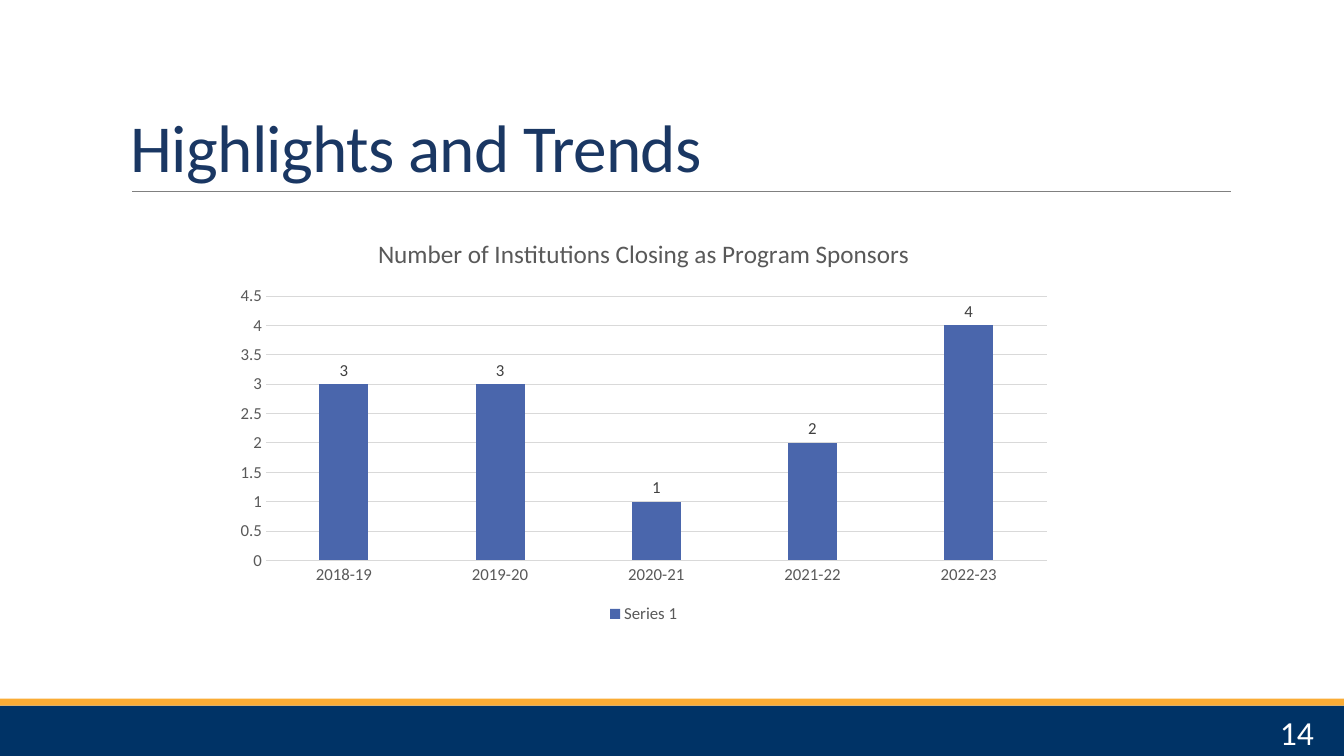
from lxml.etree import SubElement
from pptx import Presentation
from pptx.chart.data import CategoryChartData
from pptx.dml.color import RGBColor
from pptx.enum.chart import XL_CHART_TYPE, XL_LABEL_POSITION, XL_LEGEND_POSITION, XL_TICK_MARK
from pptx.enum.shapes import MSO_CONNECTOR, MSO_SHAPE
from pptx.enum.text import MSO_ANCHOR, PP_ALIGN
from pptx.oxml.ns import qn
from pptx.util import Inches, Pt

COLOURS = {
    "navy": "003366", "gold": "FAAC35", "rule": "808080", "heading": "1A3763",
    "white": "FFFFFF", "bar": "4A66AC", "grid": "D9D9D9", "axis": "595959",
    "label": "404040",
}


class SlideBuilder:
    """Holds the style and current slide; lengths are percents of the slide."""

    def __init__(self, presentation, font="Calibri"):
        self.width = presentation.slide_width
        self.height = presentation.slide_height
        self.font_name = font
        self.slide = presentation.slides.add_slide(presentation.slide_layouts[6])

    def place(self, x, y):
        return round(self.width * x / 100), round(self.height * y / 100)

    def area(self, x, y, w, h):
        return *self.place(x, y), *self.place(w, h)

    def colour(self, name):
        return RGBColor.from_string(COLOURS[name])

    def style_font(self, font, size, colour):
        font.name = self.font_name
        font.size = Pt(size)
        font.bold = False
        font.color.rgb = self.colour(colour)

    def style_line(self, line, colour, width):
        line.color.rgb = self.colour(colour)
        line.width = Pt(width)

    def band(self, area, colour):
        band = self.slide.shapes.add_shape(MSO_SHAPE.RECTANGLE, *self.area(*area))
        band.shadow.inherit = False
        band.fill.solid()
        band.fill.fore_color.rgb = self.colour(colour)
        band.line.fill.background()

    def rule(self, start, end, colour, width):
        rule = self.slide.shapes.add_connector(
            MSO_CONNECTOR.STRAIGHT, *self.place(*start), *self.place(*end))
        self.style_line(rule.line, colour, width)
        SubElement(rule._element.spPr, qn("a:effectLst"))

    def text(self, area, words, size, colour, anchor, align=PP_ALIGN.LEFT,
             line_spacing=1.0, tracking=0):
        frame = self.slide.shapes.add_textbox(*self.area(*area)).text_frame
        frame.word_wrap = True
        frame.vertical_anchor = anchor
        frame.text = words
        paragraph = frame.paragraphs[0]
        paragraph.alignment = align
        paragraph.line_spacing = line_spacing
        run = paragraph.runs[0]
        self.style_font(run.font, size, colour)
        if tracking:
            run.font._element.set("spc", str(round(tracking * 100)))

    def column_chart(self, area, title, series_name, values):
        data = CategoryChartData()
        data.categories = list(values)
        data.add_series(series_name, list(values.values()))
        chart = self.slide.shapes.add_chart(
            XL_CHART_TYPE.COLUMN_CLUSTERED, *self.area(*area), data).chart
        self.style_font(chart.font, 12, "axis")

        # Chart title and legend
        chart.has_title = True
        heading = chart.chart_title.text_frame
        heading.text = title
        self.style_font(heading.paragraphs[0].runs[0].font, 18, "axis")
        chart.chart_title.include_in_layout = False
        chart.has_legend = True
        chart.legend.position = XL_LEGEND_POSITION.BOTTOM
        chart.legend.include_in_layout = False
        self.style_font(chart.legend.font, 12, "axis")

        # Axes
        for axis in (chart.category_axis, chart.value_axis):
            axis.major_tick_mark = axis.minor_tick_mark = XL_TICK_MARK.NONE
            self.style_font(axis.tick_labels.font, 12, "axis")
        self.style_line(chart.category_axis.format.line, "grid", 0.75)
        chart.value_axis.format.line.fill.background()
        self.style_line(chart.value_axis.major_gridlines.format.line, "grid", 0.75)

        # Columns and their values
        plot = chart.plots[0]
        plot.vary_by_categories = False
        plot.gap_width = 219
        plot.overlap = -27
        columns = plot.series[0]
        columns.format.fill.solid()
        columns.format.fill.fore_color.rgb = self.colour("bar")
        labels = columns.data_labels
        labels.show_value = True
        labels.position = XL_LABEL_POSITION.OUTSIDE_END
        self.style_font(labels.font, 12, "label")


def main():
    presentation = Presentation()
    presentation.slide_width = Inches(13.33)
    presentation.slide_height = Inches(7.5)
    builder = SlideBuilder(presentation)

    # Footer bands
    builder.band((0, 93.33, 100, 6.67), "navy")
    builder.band((0, 92.4, 100, 0.93), "gold")

    # Heading with its rule
    builder.rule((9.83, 25.33), (91.6, 25.33), "rule", 0.5)
    builder.text((9, 4.13, 82.52, 21.2), "Highlights and Trends", 48, "heading",
                 MSO_ANCHOR.BOTTOM, line_spacing=0.85, tracking=-0.5)

    # Slide number
    builder.text((87.77, 94.13, 10.73, 5.33), "14", 24, "white",
                 MSO_ANCHOR.MIDDLE, PP_ALIGN.RIGHT)

    # Closures by year
    closures = {"2018-19": 3, "2019-20": 3, "2020-21": 1, "2021-22": 2, "2022-23": 4}
    builder.column_chart((16.65, 28.93, 62.49, 54.13),
                         "Number of Institutions Closing as Program Sponsors",
                         "Series 1", closures)

    presentation.save("out.pptx")


if __name__ == "__main__":
    main()
